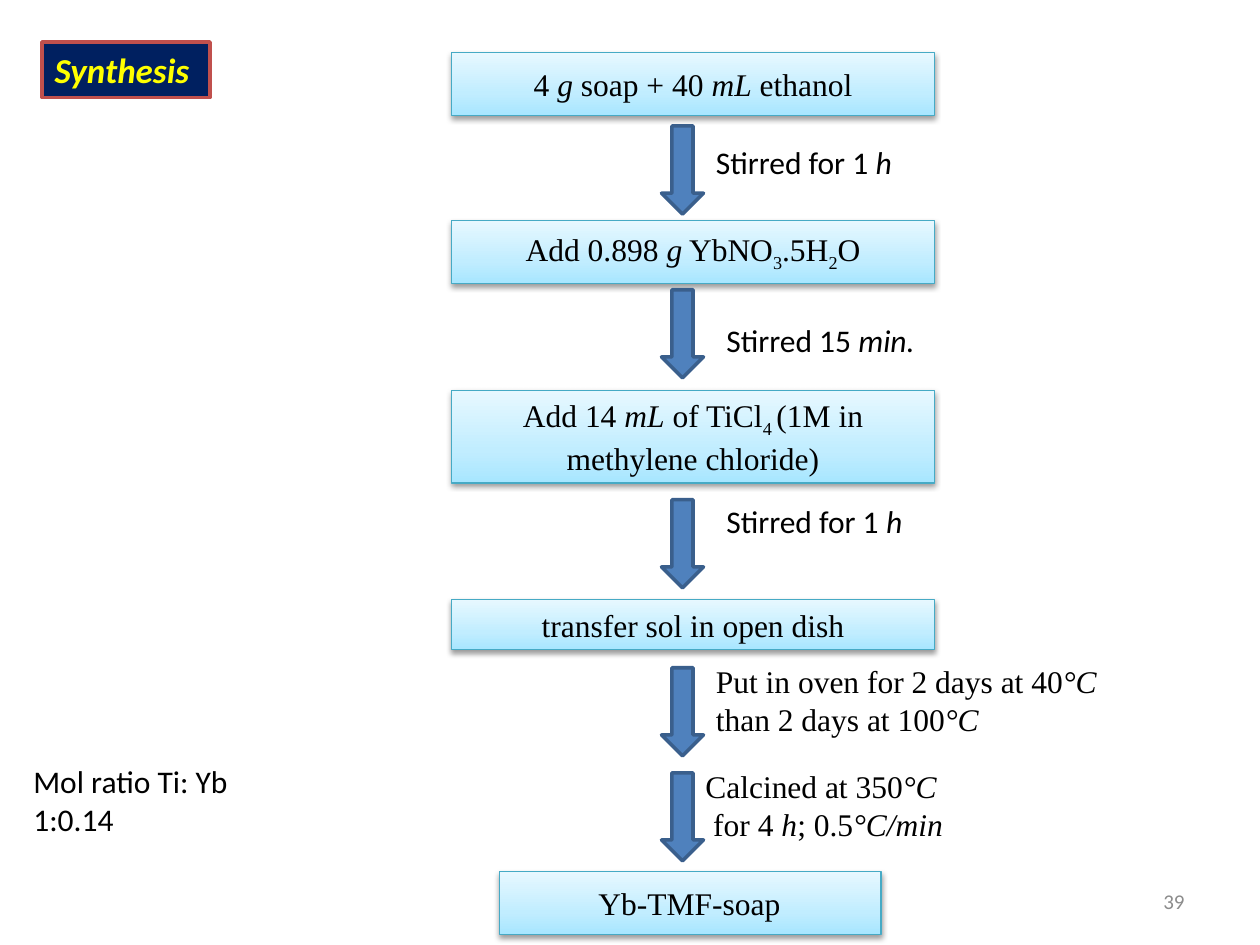
import copy

import pptx
import pptx.dml.color
import pptx.enum.shapes
import pptx.enum.text
import pptx.oxml
import pptx.oxml.ns
import pptx.util

SHAPE = pptx.enum.shapes.MSO_SHAPE
ALIGN = pptx.enum.text.PP_ALIGN
MIDDLE = pptx.enum.text.MSO_ANCHOR.MIDDLE
FIT = pptx.enum.text.MSO_AUTO_SIZE
SERIF, SANS = "Times New Roman", "Calibri"
COLS, ROWS = 120, 90
WIDE, HIGH = pptx.util.Inches(10), pptx.util.Inches(7.5)

GLOW = [(0, "A7E6FF"), (0.35, "C1EDFF"), (1, "E7F8FF")]
SHADOW = (
    f'<a:effectLst {pptx.oxml.ns.nsdecls("a")}>'
    '<a:outerShdw blurRad="40000" dist="20000" dir="5400000" rotWithShape="0">'
    '<a:srgbClr val="000000"><a:alpha val="38000"/></a:srgbClr>'
    '</a:outerShdw></a:effectLst>'
)

# Text marks: *italic*, _subscript_
# left, top, width, height, text, left inset (None: centred)
STEPS = [
    (43, 5, 46, 6, "4 *g* soap + 40 *mL* ethanol", None),
    (43, 21, 46, 6, "Add 0.898 *g* YbNO_3_.5H_2_O", None),
    (43, 37.2, 46, 8.8, "Add 14 *mL* of TiCl_4 _(1M in methylene chloride)", None),
    (43, 57.1, 46, 4.8, "transfer sol in open dish", None),
    (47.6, 83, 36.3, 6, "Yb-TMF-soap", 9.4),
]
ARROWS = [12, 27.6, 47.6, 63.6, 73.6]
NOTES = [
    (67, 13, 19.4, 4.8, SANS, ["Stirred for 1 *h*"]),
    (68, 30, 20.5, 4.8, SANS, ["Stirred 15 *min.*"]),
    (68, 47.2, 19.4, 4.8, SANS, ["Stirred for 1 *h*"]),
    (67, 62.5, 39.8, 8.5, SERIF,
     ["Put in oven for 2 days at 40*°C*", "than 2 days at 100*°C*"]),
    (66, 72.5, 26.3, 8.5, SERIF,
     ["Calcined at 350*°C*", " for 4 *h*; 0.5*°C/min*"]),
    (2, 72, 21.8, 8.5, SANS, ["Mol ratio Ti: Yb", "1:0.14"]),
]


def color(code):
    return pptx.dml.color.RGBColor.from_string(code)


def place(left, top, width, height):
    """Turn grid columns and rows into slide lengths."""
    return (round(left * WIDE / COLS), round(top * HIGH / ROWS),
            round(width * WIDE / COLS), round(height * HIGH / ROWS))


def style(font, tint="000000", **look):
    for name, value in look.items():
        setattr(font, name, value)
    font.color.rgb = color(tint)


def write(para, text, face, size=18, tint="000000"):
    """Add the marked text as runs, with italics and subscripts."""
    for i, part in enumerate(text.split("*")):
        for j, bit in enumerate(part.split("_")):
            if bit:
                run = para.add_run()
                run.text = bit
                look = {"name": face, "size": pptx.util.Pt(size)}
                if i % 2:
                    look["italic"] = True
                style(run.font, tint, **look)
                if j % 2:
                    run.font._element.set("baseline", "-25000")


def edge(shape, tint, width):
    shape.line.color.rgb = color(tint)
    shape.line.width = pptx.util.Pt(width)


def add_title(slide):
    title = slide.shapes.title
    title.left, title.top, title.width, title.height = place(4, 4, 16, 5.3)
    title.fill.solid()
    title.fill.fore_color.rgb = color("002060")
    edge(title, "C0504D", 2)
    frame = title.text_frame
    frame.text = "Synthesis"
    frame.auto_size = FIT.NONE
    frame.vertical_anchor = MIDDLE
    para = frame.paragraphs[0]
    para.alignment = ALIGN.LEFT
    style(para.runs[0].font, "FFFF00", name=SANS, size=pptx.util.Pt(20),
          bold=True, italic=True)


def add_step(slide, left, top, width, height, text, inset):
    box = slide.shapes.add_shape(SHAPE.RECTANGLE, *place(left, top, width, height))
    box.fill.gradient()
    box.fill.gradient_angle = 90
    first = box._element.spPr.find(".//" + pptx.oxml.ns.qn("a:gs"))
    first.addnext(copy.deepcopy(first))
    for stop, (spot, tint) in zip(box.fill.gradient_stops, GLOW):
        stop.position = spot
        stop.color.rgb = color(tint)
    edge(box, "46AAC5", 0.75)
    box._element.spPr.append(pptx.oxml.parse_xml(SHADOW))
    frame = box.text_frame
    frame.word_wrap = True
    frame.vertical_anchor = MIDDLE
    para = frame.paragraphs[0]
    para.alignment = ALIGN.CENTER
    if inset is not None:
        para.alignment = ALIGN.LEFT
        frame.margin_left = place(inset, 0, 0, 0)[0]
    write(para, text, SERIF)


def add_arrow(slide, top):
    arrow = slide.shapes.add_shape(SHAPE.DOWN_ARROW, *place(63, top, 4, 8.4))
    arrow.shadow.inherit = False
    arrow.fill.solid()
    arrow.fill.fore_color.rgb = color("4F81BD")
    edge(arrow, "3A5F8C", 2)


def add_note(slide, left, top, width, height, face, lines):
    frame = slide.shapes.add_textbox(*place(left, top, width, height)).text_frame
    frame.word_wrap = False
    frame.auto_size = FIT.SHAPE_TO_FIT_TEXT
    for i, line in enumerate(lines):
        para = frame.add_paragraph() if i else frame.paragraphs[0]
        write(para, line, face)


def add_number(slide):
    frame = slide.shapes.add_textbox(*place(86, 83.4, 28, 4.8)).text_frame
    frame.word_wrap = True
    frame.vertical_anchor = MIDDLE
    para = frame.paragraphs[0]
    para.alignment = ALIGN.RIGHT
    write(para, "39", SANS, 12, "8C8C8C")


def main():
    deck = pptx.Presentation()
    deck.slide_width, deck.slide_height = WIDE, HIGH
    slide = deck.slides.add_slide(deck.slide_layouts[5])
    add_title(slide)
    for step in STEPS:
        add_step(slide, *step)
    for top in ARROWS:
        add_arrow(slide, top)
    for note in NOTES:
        add_note(slide, *note)
    add_number(slide)
    deck.save("out.pptx")


if __name__ == "__main__":
    main()
